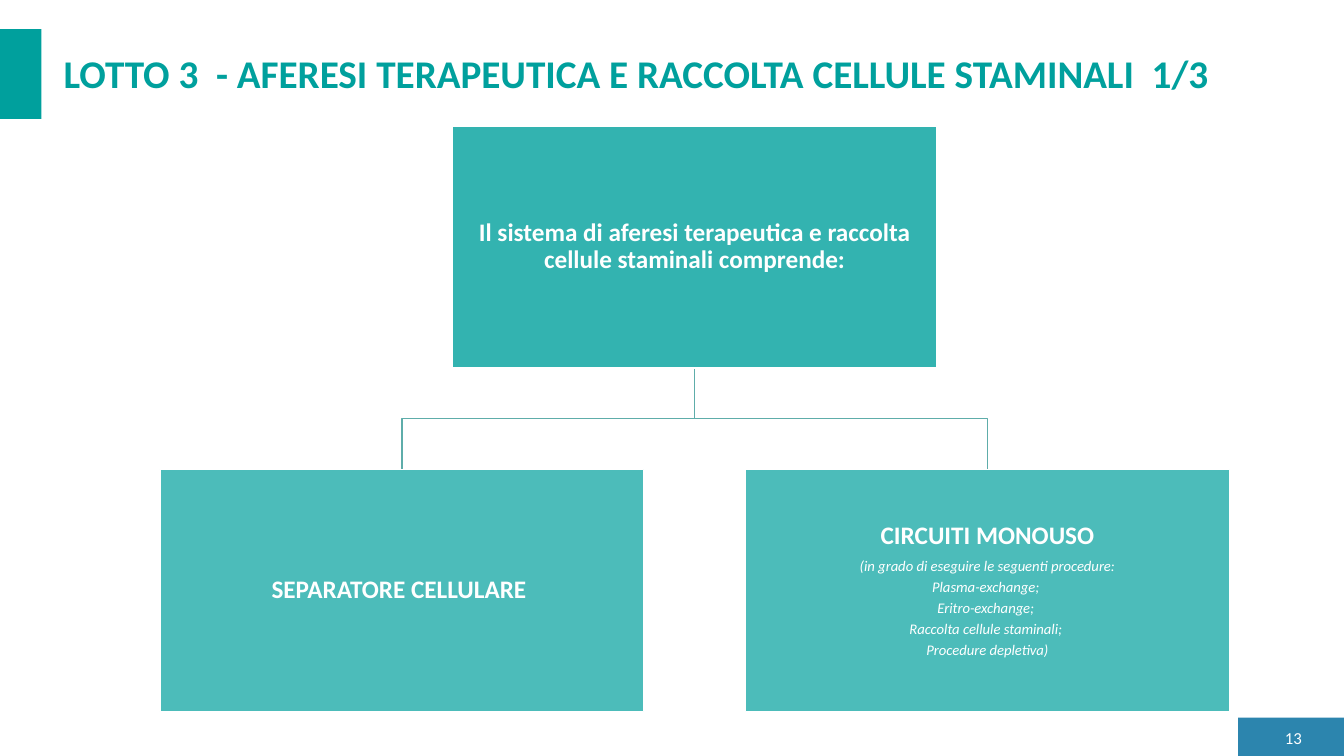
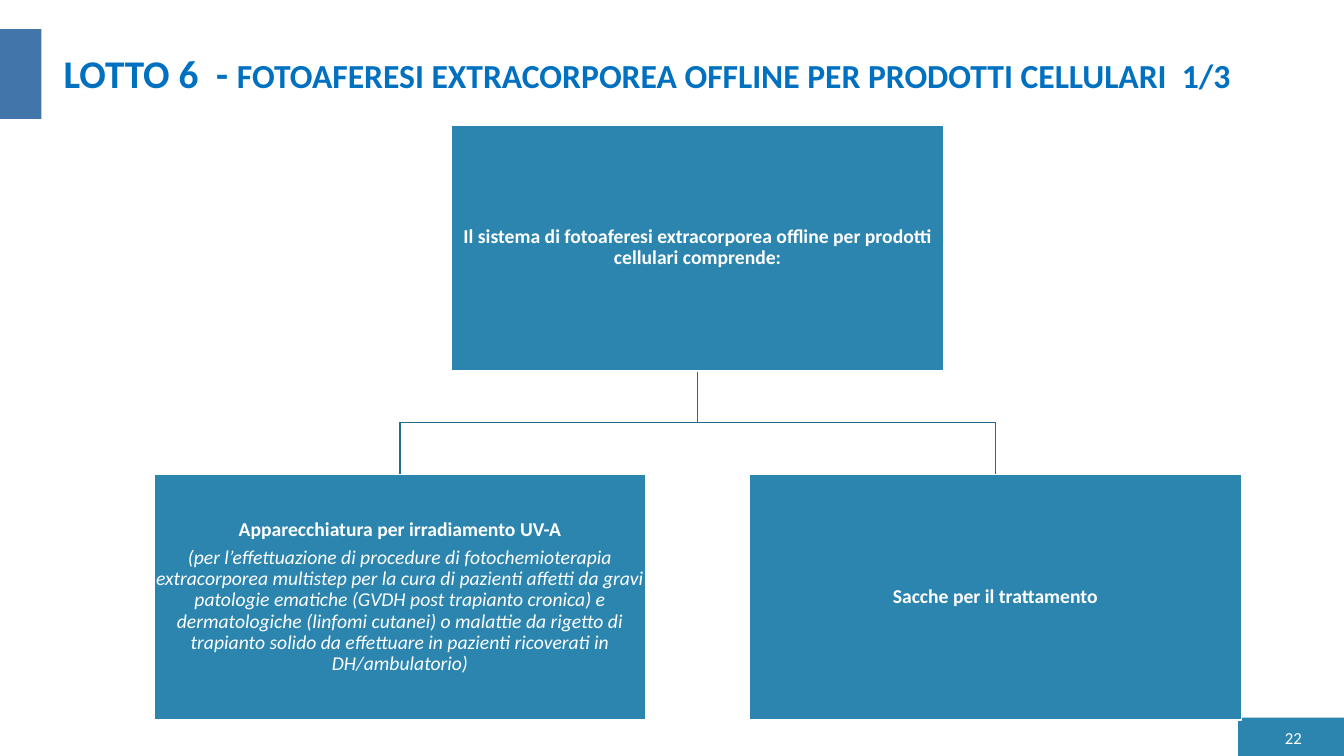
from lxml import etree
from pptx import Presentation
from pptx.dml.color import RGBColor
from pptx.enum import shapes, text
from pptx.oxml.ns import qn
from pptx.util import Inches, Pt

FONT = "Calibri"
COLORS = {
    "white": "FFFFFF", "band": "2C85AE",
    "teal": "00A09D", "teal_line": "5EADAA",
    "blue_title": "0070C0", "blue_tab": "4276AA", "blue_line": "236B8B",
}
GAP_RATIO = 0.21  # gap between boxes, as a share of box width

# Content: a paragraph is (size, bold, italic, text); a title run is (size, text)
SLIDES = [
    {
        "number": "13",
        "title": [(28, "LOTTO 3  - AFERESI TERAPEUTICA E RACCOLTA CELLULE STAMINALI  1/3")],
        "title_color": "teal", "tab": "teal", "line": "teal_line",
        "box": "teal", "root_alpha": 80, "branch_alpha": 70,
        "center": 6.89, "top": 1.25, "size": (4.8, 2.4),
        "root": [(18, True, False, "Il sistema di aferesi terapeutica e raccolta cellule staminali comprende:")],
        "branches": [
            [(18, True, False, "SEPARATORE CELLULARE ")],
            [
                (18, True, False, "CIRCUITI MONOUSO"),
                (10.5, False, True, "(in grado di eseguire le seguenti procedure:"),
                (10.5, False, True, "Plasma-exchange; "),
                (10.5, False, True, "Eritro-exchange; "),
                (10.5, False, True, "Raccolta cellule staminali; "),
                (10.5, False, True, "Procedure depletiva)"),
            ],
        ],
    },
    {
        "number": "22",
        "title": [(28, "LOTTO 6  - "),
                  (24, "FOTOAFERESI EXTRACORPOREA OFFLINE PER PRODOTTI CELLULARI  1/3")],
        "title_color": "blue_title", "tab": "blue_tab", "line": "blue_line",
        "box": "band", "root_alpha": 100, "branch_alpha": 100,
        "center": 6.92, "top": 1.24, "size": (4.88, 2.44),
        "root": [(14, True, False, "Il sistema di fotoaferesi extracorporea offline per prodotti cellulari comprende:")],
        "branches": [
            [
                (14, True, False, "Apparecchiatura per irradiamento UV-A"),
                (14, False, True,
                 "(per l’effettuazione di procedure di fotochemioterapia extracorporea "
                 "multistep per la cura di pazienti affetti da gravi patologie ematiche "
                 "(GVDH post trapianto cronica) e dermatologiche (linfomi cutanei) o "
                 "malattie da rigetto di trapianto solido da effettuare in pazienti "
                 "ricoverati in DH/ambulatorio)"),
            ],
            [(14, True, False, "Sacche per il trattamento")],
        ],
    },
]


def rgb(name):
    return RGBColor.from_string(COLORS[name])


def add_rect(slide, left, top, width, height, color, alpha=100):
    rect = slide.shapes.add_shape(shapes.MSO_SHAPE.RECTANGLE, Inches(left), Inches(top),
                                  Inches(width), Inches(height))
    rect.shadow.inherit = False
    rect.fill.solid()
    rect.fill.fore_color.rgb = rgb(color)
    rect.line.fill.background()
    if alpha < 100:
        fill_color = rect.element.spPr.find(qn("a:solidFill"))[0]
        etree.SubElement(fill_color, qn("a:alpha"), val=str(alpha * 1000))
    return rect


def add_box(slide, left, top, size, color, alpha, lines):
    box = add_rect(slide, left, top, *size, color, alpha)
    box.line.color.rgb = rgb("white")
    box.line.width = Pt(1)
    frame = box.text_frame
    frame.word_wrap = True
    frame.vertical_anchor = text.MSO_ANCHOR.MIDDLE
    frame.margin_left = frame.margin_right = Inches(0.01)
    frame.margin_top = frame.margin_bottom = Inches(0.01)
    for i, (points, bold, italic, words) in enumerate(lines):
        para = frame.paragraphs[0] if i == 0 else frame.add_paragraph()
        para.text = words
        para.alignment = text.PP_ALIGN.CENTER
        para.line_spacing = 0.9
        para.space_after = Pt(round(points * 0.35, 1))
        font = para.font
        font.name, font.size, font.bold, font.italic = FONT, Pt(points), bold, italic
        font.color.rgb = rgb("white")


def add_branch_line(slide, points, color):
    (x, y), *rest = [(Inches(px), Inches(py)) for px, py in points]
    builder = slide.shapes.build_freeform(x, y)
    builder.add_line_segments(rest, close=False)
    line = builder.convert_to_shape()
    line.shadow.inherit = False
    line.fill.background()
    line.line.color.rgb = rgb(color)
    line.line.width = Pt(1)


def add_tree(slide, data):
    width, height = data["size"]
    center, top = data["center"], data["top"]
    gap = width * GAP_RATIO
    root_bottom = top + height
    branch_top = root_bottom + gap
    middle = root_bottom + gap / 2
    offset = (width + gap) / 2
    branch_centers = [center - offset, center + offset]

    for x in branch_centers:
        add_branch_line(slide, [(center, root_bottom), (center, middle),
                                (x, middle), (x, branch_top)], data["line"])
    add_box(slide, center - width / 2, top, data["size"], data["box"],
            data["root_alpha"], data["root"])
    for x, lines in zip(branch_centers, data["branches"]):
        add_box(slide, x - width / 2, branch_top, data["size"], data["box"],
                data["branch_alpha"], lines)


def set_title(slide, data):
    frame = slide.shapes.title.text_frame
    frame.auto_size = text.MSO_AUTO_SIZE.NONE
    frame.vertical_anchor = text.MSO_ANCHOR.TOP
    para = frame.paragraphs[0]
    para.alignment = text.PP_ALIGN.LEFT
    para.font.name, para.font.bold = FONT, True
    para.font.color.rgb = rgb(data["title_color"])
    for points, words in data["title"]:
        run = para.add_run()
        run.text = words
        run.font.size = Pt(points)


def add_page_number(slide, number):
    frame = slide.shapes.add_textbox(Inches(12.6), Inches(7.2),
                                     Inches(0.41), Inches(0.23)).text_frame
    frame.word_wrap = True
    frame.vertical_anchor = text.MSO_ANCHOR.MIDDLE
    para = frame.paragraphs[0]
    para.text = number
    para.alignment = text.PP_ALIGN.RIGHT
    para.font.name, para.font.size = FONT, Pt(12)
    para.font.color.rgb = rgb("white")


def main():
    prs = Presentation()
    prs.slide_width, prs.slide_height = Inches(13.33), Inches(7.5)

    # Shared layout: title position and footer band
    layout = prs.slide_layouts.get_by_name("Title Only")
    title = layout.placeholders[0]
    title.left, title.top = Inches(0.53), Inches(0.44)
    title.width, title.height = Inches(12.31), Inches(0.57)

    for i, data in enumerate(SLIDES):
        slide = prs.slides.add_slide(layout)
        if i == 0:
            band = add_rect(slide, 12.28, 7.12, 1.05, 0.38, "band")
            layout.shapes.element.append(band.element)
        set_title(slide, data)
        add_page_number(slide, data["number"])
        add_rect(slide, 0, 0.29, 0.41, 0.89, data["tab"])
        add_tree(slide, data)

    prs.save("out.pptx")


if __name__ == "__main__":
    main()
